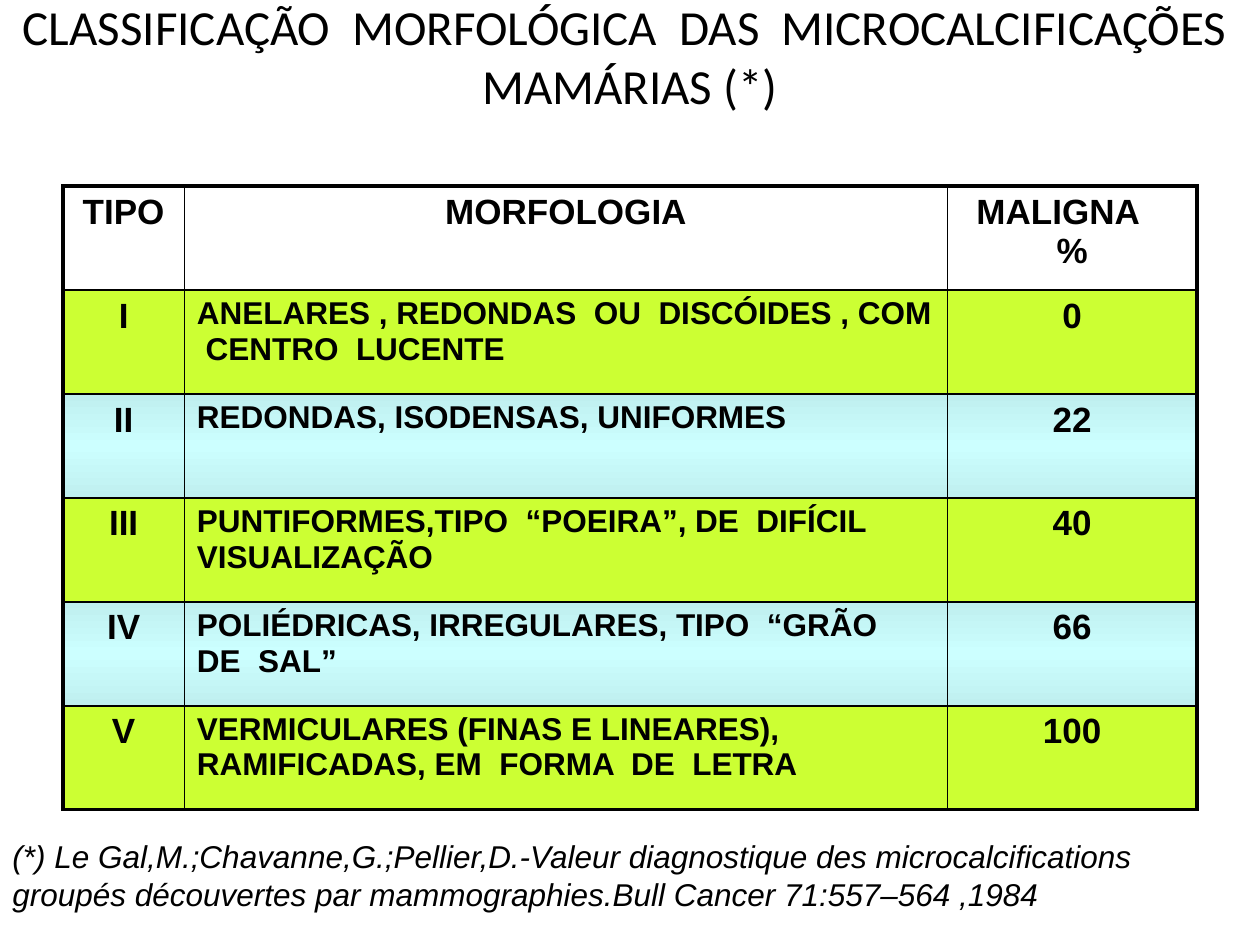
import lxml.etree
import pptx
import pptx.dml.color
import pptx.enum.text
import pptx.oxml.ns
import pptx.util

BLACK = pptx.dml.color.RGBColor(0x00, 0x00, 0x00)
WHITE = pptx.dml.color.RGBColor(0xFF, 0xFF, 0xFF)
LIME = pptx.dml.color.RGBColor(0xCC, 0xFF, 0x33)
AQUA = pptx.dml.color.RGBColor(0xCC, 0xFF, 0xFF)
AQUA_EDGE = pptx.dml.color.RGBColor(0xBF, 0xEF, 0xEF)

CENTER = pptx.enum.text.PP_ALIGN.CENTER
LEFT = pptx.enum.text.PP_ALIGN.LEFT
THICK, THIN = 2.25, 1
COLUMN_SHARES = (0.107, 0.673, 0.22)

HEADING = "CLASSIFICAÇÃO  MORFOLÓGICA  DAS  MICROCALCIFICAÇÕES  MAMÁRIAS (*)"
CLASSES = (
    ("TIPO", "MORFOLOGIA", "MALIGNA    %"),
    ("I", "ANELARES , REDONDAS  OU  DISCÓIDES , COM  CENTRO  LUCENTE", "0"),
    ("II", "REDONDAS, ISODENSAS, UNIFORMES", "22"),
    ("III", "PUNTIFORMES,TIPO  “POEIRA”, DE  DIFÍCIL  VISUALIZAÇÃO", "40"),
    ("IV", "POLIÉDRICAS, IRREGULARES, TIPO  “GRÃO  DE  SAL”", "66"),
    ("V", "VERMICULARES (FINAS E LINEARES), RAMIFICADAS, EM  FORMA  DE  LETRA", "100"),
)
CITATION = (
    "(*) Le Gal,M.;Chavanne,G.;Pellier,D.-Valeur diagnostique des microcalcifications  "
    "groupés découvertes par mammographies.Bull Cancer 71:557–564 ,1984"
)


def write(frame, text, size, font="Arial", align=LEFT, bold=False, italic=False):
    """Put one formatted paragraph in a text frame."""
    frame.word_wrap = True
    paragraph = frame.paragraphs[0]
    paragraph.alignment = align
    run = paragraph.add_run()
    run.text = text
    run.font.name = font
    run.font.size = pptx.util.Pt(size)
    run.font.bold = bold
    run.font.italic = italic
    run.font.color.rgb = BLACK


def add_xml(parent, tag, **attributes):
    """Append a DrawingML element and return it."""
    return lxml.etree.SubElement(parent, pptx.oxml.ns.qn(tag), attributes)


def border_cell(cell, widths):
    """Draw black cell borders from a mapping of side to points."""
    properties = cell._tc.get_or_add_tcPr()
    for side, width in widths.items():
        line = add_xml(properties, f"a:ln{side}", w=str(pptx.util.Pt(width)))
        add_xml(add_xml(line, "a:solidFill"), "a:srgbClr", val=str(BLACK))


def fill_cell(cell, row):
    """Fill the header white and the body in alternating lime and aqua."""
    if row and row % 2 == 0:
        gradient = add_xml(cell._tc.get_or_add_tcPr(), "a:gradFill", rotWithShape="1")
        stops = add_xml(gradient, "a:gsLst")
        for position, color in ((0, AQUA_EDGE), (50, AQUA), (100, AQUA_EDGE)):
            stop = add_xml(stops, "a:gs", pos=str(position * 1000))
            add_xml(stop, "a:srgbClr", val=str(color))
        add_xml(gradient, "a:lin", ang="5400000", scaled="1")
    else:
        cell.fill.solid()
        cell.fill.fore_color.rgb = LIME if row else WHITE


def place_heading(slide, box):
    """Move and format the title placeholder."""
    heading = slide.shapes.title
    heading.left, heading.top, heading.width, heading.height = box
    heading.text_frame.vertical_anchor = pptx.enum.text.MSO_ANCHOR.MIDDLE
    write(heading.text_frame, HEADING, 28, font="Calibri", align=CENTER)


def place_classification(slide, box):
    """Build the table of morphological types."""
    last_row, last_column = len(CLASSES) - 1, len(COLUMN_SHARES) - 1
    table = slide.shapes.add_table(len(CLASSES), len(COLUMN_SHARES), *box).table
    table.first_row = table.horz_banding = False
    for column, share in zip(table.columns, COLUMN_SHARES):
        column.width = int(box[2] * share)
    for row, entries in enumerate(CLASSES):
        for column, entry in enumerate(entries):
            cell = table.cell(row, column)
            description = row > 0 and column == 1
            write(cell.text_frame, entry, 18 if description else 20,
                  align=LEFT if description else CENTER, bold=True)
            border_cell(cell, {
                "L": THICK if column == 0 else THIN,
                "R": THICK if column == last_column else THIN,
                "T": THICK if row == 0 else THIN,
                "B": THICK if row == last_row else THIN,
            })
            fill_cell(cell, row)


def place_citation(slide, box):
    """Add the source note below the table."""
    write(slide.shapes.add_textbox(*box).text_frame, CITATION, 18, italic=True)


def main():
    """Build and save the slide."""
    deck = pptx.Presentation()
    deck.slide_width = pptx.util.Inches(10)
    deck.slide_height = pptx.util.Inches(7.5)
    slide = deck.slides.add_slide(deck.slide_layouts[5])

    def share_box(left, top, width, height):
        """Turn shares of the slide's size into lengths."""
        return (int(deck.slide_width * left), int(deck.slide_height * top),
                int(deck.slide_width * width), int(deck.slide_height * height))

    place_heading(slide, share_box(0, -0.025, 1, 1 / 6))
    place_classification(slide, share_box(0.05, 0.197, 0.9, 0.66))
    place_citation(slide, share_box(0, 0.879, 1, 0.093))
    deck.save("out.pptx")


if __name__ == "__main__":
    main()
